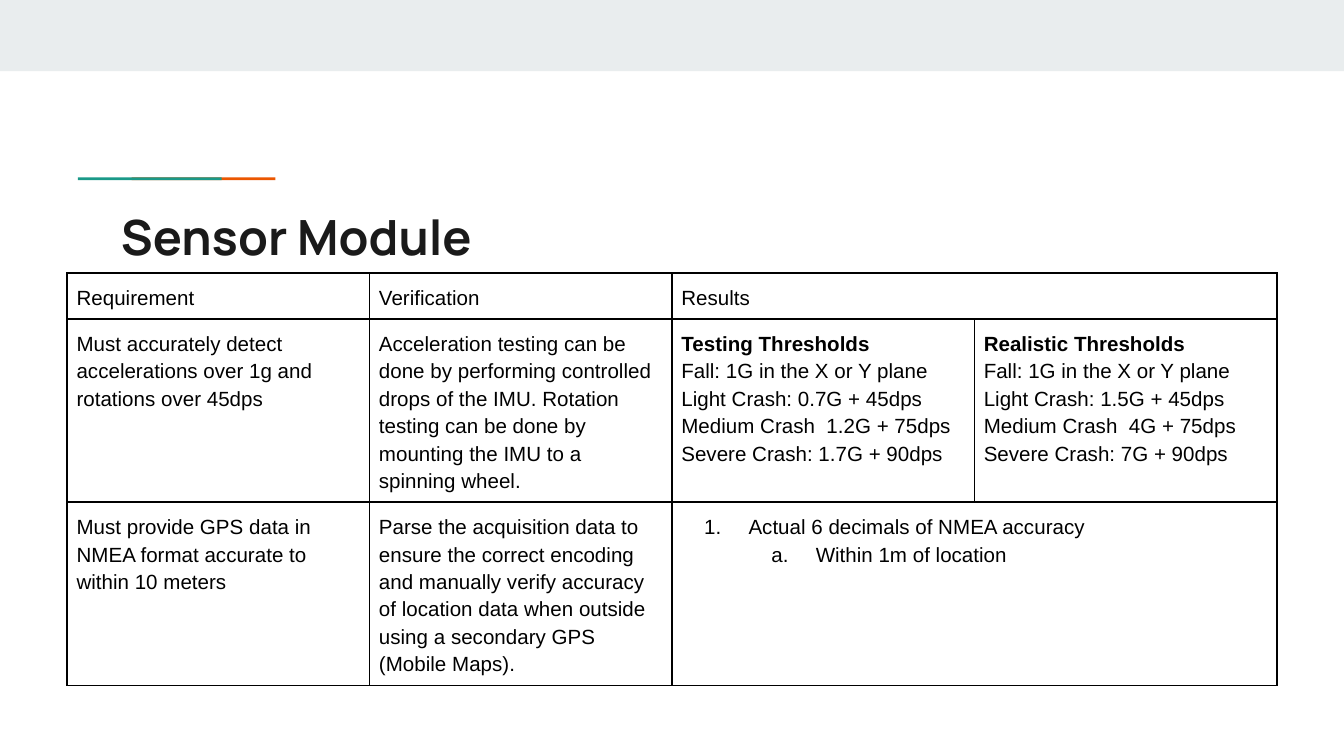
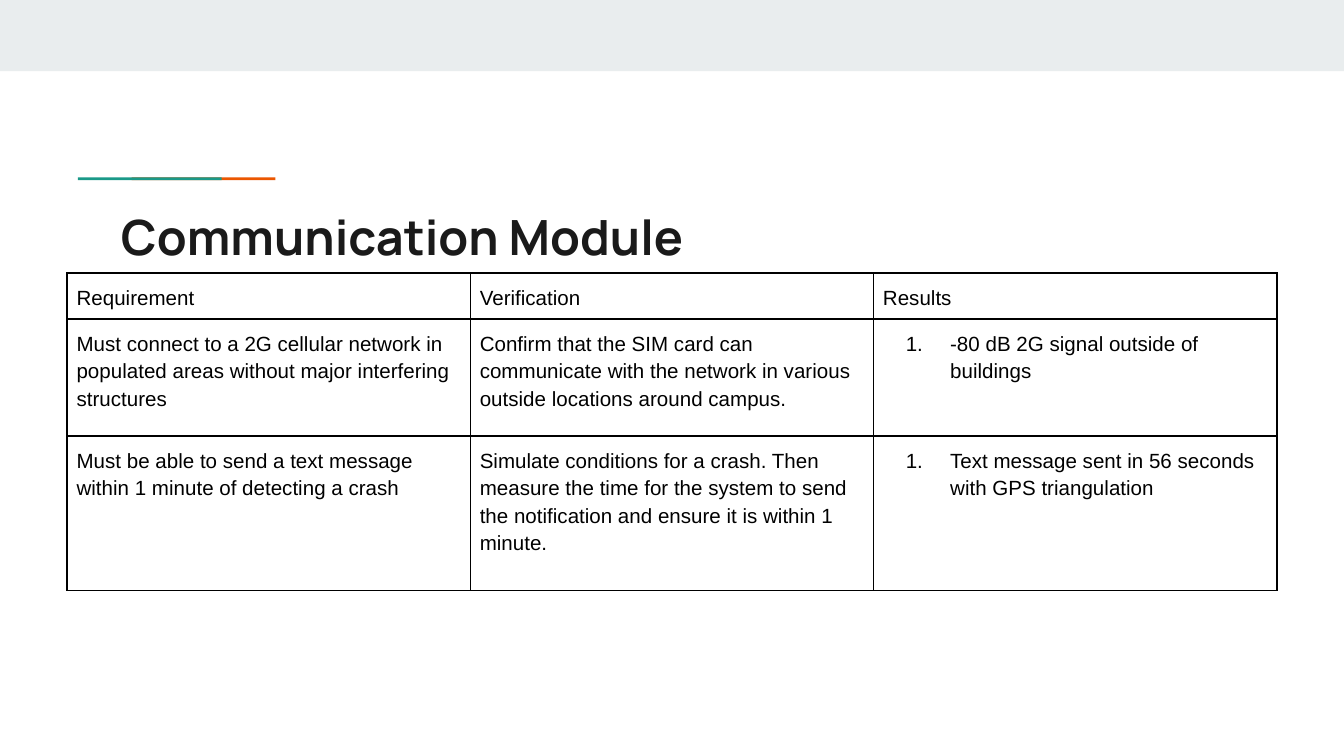
from dataclasses import dataclass
from typing import NamedTuple, Union

from lxml import etree
from pptx import Presentation
from pptx.dml.color import RGBColor
from pptx.enum.shapes import MSO_SHAPE
from pptx.enum.text import MSO_ANCHOR, MSO_AUTO_SIZE, PP_ALIGN
from pptx.oxml.ns import qn
from pptx.util import Inches, Pt

RECT = MSO_SHAPE.RECTANGLE
TOP, LEFT, NO_FIT = MSO_ANCHOR.TOP, PP_ALIGN.LEFT, MSO_AUTO_SIZE.NONE
TITLE_ONLY = 5
NUMBERING = ("arabicPeriod", "alphaLcPeriod")
BORDER_SIDES = ("a:lnL", "a:lnR", "a:lnT", "a:lnB")


@dataclass(frozen=True)
class Theme:
    band: str = "E9EDEE"
    orange: str = "EB5600"
    teal: str = "1A9988"
    title: str = "1A1A1A"
    ink: str = "000000"
    title_font: str = "Manrope"
    body_font: str = "Arial"
    title_size: int = 26
    body_size: int = 11
    border: float = 1
    line_spacing: float = 1.2


THEME = Theme()


class Bar(NamedTuple):
    left: float
    top: float
    width: float
    height: float
    color: str


class Line(NamedTuple):
    text: str
    bold: bool = False
    list_level: int = -1  # -1 means an unnumbered line


Cell = Union[str, list[Line], None]  # None joins the cell to its left neighbour


@dataclass(frozen=True)
class ModuleSlide:
    title: str
    row_heights: tuple[float, ...]
    rows: list[list[Cell]]


BARS = [
    Bar(0, 0, 10, 0.53, THEME.band),
    Bar(0.98, 1.32, 1.07, 0.02, THEME.orange),
    Bar(0.58, 1.32, 1.07, 0.02, THEME.teal),
]


def thresholds(name: str, light: str, medium: str, severe: str) -> list[Line]:
    return [
        Line(f"{name} Thresholds", bold=True),
        Line("Fall: 1G in the X or Y plane"),
        Line(f"Light Crash: {light} + 45dps"),
        Line(f"Medium Crash  {medium} + 75dps"),
        Line(f"Severe Crash: {severe} + 90dps"),
    ]


MODULES = [
    ModuleSlide("Sensor Module", (0.34, 1.36, 1.36), [
        ["Requirement", "Verification", "Results", None],
        ["Must accurately detect accelerations over 1g and rotations over 45dps",
         "Acceleration testing can be done by performing controlled drops of the IMU. "
         "Rotation testing can be done by mounting the IMU to a spinning wheel.",
         thresholds("Testing", "0.7G", "1.2G", "1.7G"),
         thresholds("Realistic", "1.5G", "4G", "7G")],
        ["Must provide GPS data in NMEA format accurate to within 10 meters",
         "Parse the acquisition data to ensure the correct encoding and manually verify "
         "accuracy of location data when outside using a secondary GPS (Mobile Maps).",
         [Line("Actual 6 decimals of NMEA accuracy", list_level=0),
          Line("Within 1m of location", list_level=1)],
         None],
    ]),
    ModuleSlide("Communication Module", (0.34, 0.87, 1.15), [
        ["Requirement", "Verification", "Results"],
        ["Must connect to a 2G cellular network in populated areas without major "
         "interfering structures",
         "Confirm that the SIM card can communicate with the network in various outside "
         "locations around campus.",
         [Line("-80 dB 2G signal outside of buildings", list_level=0)]],
        ["Must be able to send a text message within 1 minute of detecting a crash",
         "Simulate conditions for a crash. Then measure the time for the system to send "
         "the notification and ensure it is within 1 minute.",
         [Line("Text message sent in 56 seconds with GPS triangulation", list_level=0)]],
    ]),
]


def set_font(r, name: str, size: float, color: str, bold: bool) -> None:
    r.font.name = name
    r.font.size = Pt(size)
    r.font.bold = bold
    r.font.color.rgb = RGBColor.from_string(color)


def set_margins(box, inches: float) -> None:
    box.margin_left = box.margin_right = Inches(inches)
    box.margin_top = box.margin_bottom = Inches(inches)


def dress_layout(layout, s) -> None:
    """Put the bars on the layout, drawing them on slide s first."""
    for ph in list(layout.placeholders):
        if ph.placeholder_format.idx:
            ph.element.getparent().remove(ph.element)
    tree = layout.element.cSld.spTree
    for i, bar in enumerate(BARS):
        sp = s.shapes.add_shape(RECT, *map(Inches, bar[:4]))
        sp.shadow.inherit = False
        sp.fill.solid()
        sp.fill.fore_color.rgb = RGBColor.from_string(bar.color)
        sp.line.fill.background()
        tree.insert(2 + i, sp.element)


def add_title(s, text: str) -> None:
    sp = s.shapes.title
    sp.left, sp.top = Inches(0.8), Inches(1.44)
    sp.width, sp.height = Inches(8.41), Inches(0.59)
    tf = sp.text_frame
    tf.word_wrap = True
    tf.auto_size = NO_FIT
    tf.vertical_anchor = TOP
    set_margins(tf, 0.1)
    p = tf.paragraphs[0]
    p.alignment = LEFT
    p.line_spacing = 1.0
    r = p.add_run()
    r.text = text
    set_font(r, THEME.title_font, THEME.title_size, THEME.title, True)


def number_paragraph(p, level: int) -> None:
    p.level = level
    pPr = p._p.get_or_add_pPr()
    pPr.set("marL", str(Inches(0.5 * (level + 1))))
    pPr.set("indent", str(Inches(-0.33)))
    color = etree.SubElement(pPr, qn("a:buClr"))
    etree.SubElement(color, qn("a:srgbClr"), val=THEME.ink)
    etree.SubElement(pPr, qn("a:buAutoNum"), type=NUMBERING[level])


def draw_borders(cell) -> None:
    tcPr = cell._tc.get_or_add_tcPr()
    for i, side in enumerate(BORDER_SIDES):
        ln = etree.Element(qn(side), w=str(Pt(THEME.border)))
        fill = etree.SubElement(ln, qn("a:solidFill"))
        etree.SubElement(fill, qn("a:srgbClr"), val=THEME.ink)
        tcPr.insert(i, ln)


def write_cell(cell, content: Union[str, list[Line]]) -> None:
    lines = [Line(content)] if isinstance(content, str) else content
    tf = cell.text_frame
    for i, line in enumerate(lines):
        p = tf.add_paragraph() if i else tf.paragraphs[0]
        if line.list_level >= 0:
            number_paragraph(p, line.list_level)
        p.line_spacing = THEME.line_spacing
        r = p.add_run()
        r.text = line.text
        set_font(r, THEME.body_font, THEME.body_size, THEME.ink, line.bold)


def add_module_table(s, module: ModuleSlide) -> None:
    n_rows, n_cols = len(module.rows), len(module.rows[0])
    table = s.shapes.add_table(n_rows, n_cols, Inches(0.5), Inches(2.03),
                               Inches(9), Inches(sum(module.row_heights))).table
    table.first_row = table.horz_banding = False
    for column in table.columns:
        column.width = Inches(9 / n_cols)
    for i, (height, row) in enumerate(zip(module.row_heights, module.rows)):
        table.rows[i].height = Inches(height)
        for j, content in enumerate(row):
            cell = table.cell(i, j)
            set_margins(cell, 0.07)
            cell.vertical_anchor = TOP
            cell.fill.background()
            draw_borders(cell)
            if content is None:
                table.cell(i, j - 1).merge(cell)
            else:
                write_cell(cell, content)


def main() -> None:
    prs = Presentation()
    prs.slide_width = Inches(10)
    prs.slide_height = prs.slide_width * 9 // 16
    layout = prs.slide_layouts[TITLE_ONLY]
    for i, module in enumerate(MODULES):
        s = prs.slides.add_slide(layout)
        if i == 0:
            dress_layout(layout, s)
        add_title(s, module.title)
        add_module_table(s, module)
    prs.save("out.pptx")


if __name__ == "__main__":
    main()
